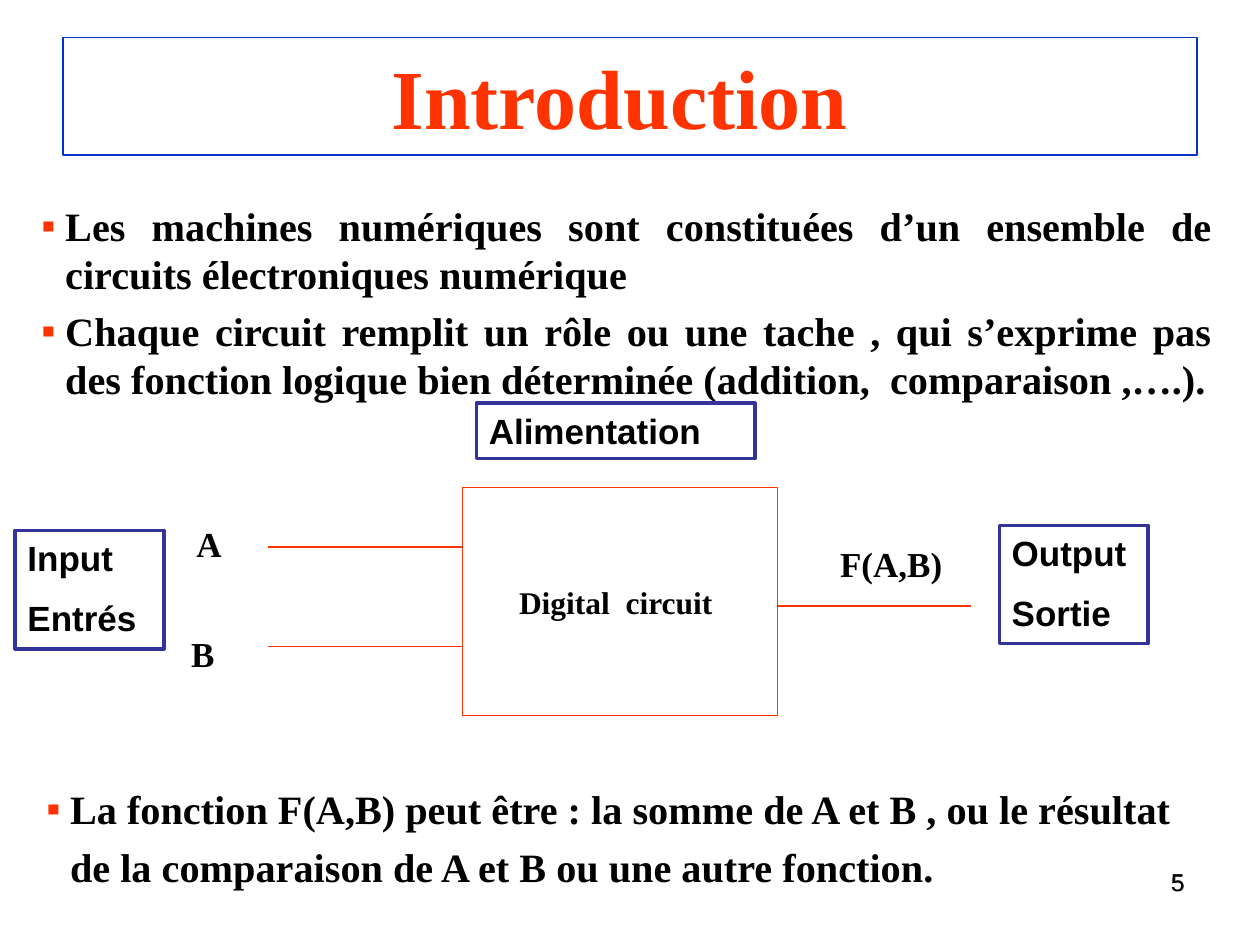
"""Build the introduction slide: a digital circuit with its inputs and output."""
from dataclasses import dataclass, field
from typing import Optional

from lxml import etree
from pptx import Presentation
from pptx import util as u
from pptx.dml.color import RGBColor
from pptx.enum import shapes, text
from pptx.oxml.ns import qn

COLOURS = {"text": "000000", "accent": "FF3300", "title": "0033CC",
           "label": "333399", "paper": "FFFFFF"}
SERIF, SANS = "Times New Roman", "Arial"
INDENT, TAB = 13.6, 28
LEFT, CENTRE, RIGHT, JUSTIFY = (text.PP_ALIGN.LEFT, text.PP_ALIGN.CENTER,
                                text.PP_ALIGN.RIGHT, text.PP_ALIGN.JUSTIFY)


@dataclass
class Block:
    """Text with its place in points, its format and an optional outline."""
    at: tuple[float, float, float, float]
    lines: list[str]
    size: float = 20
    font: str = SERIF
    bold: bool = True
    colour: str = "text"
    align: text.PP_ALIGN = LEFT
    middle: bool = False
    wrap: bool = True
    gap: float = 0
    leading: Optional[float] = None
    bullet: bool = False
    outline: Optional[str] = None
    weight: float = 0.75
    fill: Optional[str] = None


@dataclass
class Wire:
    """A horizontal wire in points."""
    start: float
    end: float
    y: float


@dataclass
class Port:
    """A framed label beside the circuit."""
    at: tuple[float, float, float, float]
    lines: list[str] = field(default_factory=list)


def rgb(name: str) -> RGBColor:
    """Return the named colour."""
    return RGBColor.from_string(COLOURS[name])


def add_bullet(paragraph) -> None:
    """Give a paragraph a hanging square bullet and a tab stop."""
    props = paragraph._p.get_or_add_pPr()
    props.set("marL", str(u.Pt(INDENT)))
    props.set("indent", str(-u.Pt(INDENT)))
    colour = etree.SubElement(props, qn("a:buClr"))
    etree.SubElement(colour, qn("a:srgbClr"), val=COLOURS["accent"])
    etree.SubElement(props, qn("a:buFont"), typeface=SANS)
    etree.SubElement(props, qn("a:buChar"), char="▪")
    tabs = etree.SubElement(props, qn("a:tabLst"))
    etree.SubElement(tabs, qn("a:tab"), pos=str(u.Pt(TAB)), algn="l")


def add_block(slide, block: Block) -> None:
    """Draw a block as a rectangle if outlined, else as a text box."""
    place = [u.Pt(length) for length in block.at]
    if block.outline:
        holder = slide.shapes.add_shape(shapes.MSO_SHAPE.RECTANGLE, *place)
        holder.shadow.inherit = False
        holder.line.color.rgb = rgb(block.outline)
        holder.line.width = u.Pt(block.weight)
        if block.fill:
            holder.fill.solid()
            holder.fill.fore_color.rgb = rgb(block.fill)
        else:
            holder.fill.background()
    else:
        holder = slide.shapes.add_textbox(*place)
    frame = holder.text_frame
    frame.word_wrap = block.wrap
    frame.vertical_anchor = text.MSO_ANCHOR.MIDDLE if block.middle else text.MSO_ANCHOR.TOP
    for index, line in enumerate(block.lines):
        paragraph = frame.add_paragraph() if index else frame.paragraphs[0]
        layout = {"alignment": block.align, "line_spacing": block.leading,
                  "space_before": u.Pt(block.gap * block.size)}
        for name, value in layout.items():
            setattr(paragraph, name, value)
        if block.bullet:
            add_bullet(paragraph)
        run = paragraph.add_run()
        run.text = line
        style = {"size": u.Pt(block.size), "name": block.font, "bold": block.bold}
        for name, value in style.items():
            setattr(run.font, name, value)
        run.font.color.rgb = rgb(block.colour)


def add_wire(slide, wire: Wire) -> None:
    """Draw a wire of the circuit."""
    connector = slide.shapes.add_connector(
        shapes.MSO_CONNECTOR.STRAIGHT,
        u.Pt(wire.start), u.Pt(wire.y), u.Pt(wire.end), u.Pt(wire.y))
    connector.line.color.rgb = rgb("accent")
    connector.line.width = u.Pt(0.75)
    etree.SubElement(connector._element.spPr, qn("a:effectLst"))


PAGE_NUMBERS = [Block((516.2, 491.8, 167.8, 37.4), ["5"], size=14, font=font,
                      bold=False, align=RIGHT) for font in (SANS, SERIF)]
PROSE = [
    Block((36, 21.6, 648, 67), ["Introduction "], size=48, colour="accent",
          align=CENTRE, middle=True, outline="title"),
    Block((16.6, 111.6, 684, 132.5),
          ["Les machines numériques sont constituées d’un ensemble de "
           "circuits électroniques numérique ",
           "Chaque circuit remplit un rôle ou une tache , qui s’exprime pas "
           "des fonction logique bien déterminée (addition,  comparaison ,….)."],
          size=23, align=JUSTIFY, gap=0.2, bullet=True, outline="paper"),
    Block((19.4, 439.2, 674.6, 74.2),
          ["La fonction F(A,B) peut être : la somme de A et B , ou le résultat "
           "de la comparaison de A et B ou une autre fonction."],
          size=23, leading=1.2, bullet=True, outline="paper"),
]
CIRCUIT = Block((264.2, 278.6, 180, 130.3), ["Digital  circuit "], size=18,
                align=CENTRE, middle=True, wrap=False, outline="accent")
WIRES = [Wire(153.4, 264.2, 312.5), Wire(153.4, 264.2, 369.4), Wire(444.2, 555.1, 346.3)]
SIGNALS = [
    Block((105.1, 295.2, 48.2, 31), ["A"], gap=0.5),
    Block((473, 306.7, 104.4, 31), ["F(A,B)"], gap=0.5),
    Block((102.2, 357.8, 48.2, 31), ["B"], gap=0.5),
]
PORTS = [
    Port((8.6, 303.1, 85, 67.7), ["Input", "Entrés"]),
    Port((571, 300.2, 85, 67.7), ["Output", "Sortie"]),
    Port((272.2, 230.4, 159.1, 31.7), ["Alimentation"]),
]


def main() -> None:
    """Build and save the slide."""
    deck = Presentation()
    deck.slide_width, deck.slide_height = u.Pt(720), u.Pt(540)
    slide = deck.slides.add_slide(deck.slide_layouts[6])
    for block in [*PAGE_NUMBERS, *PROSE, CIRCUIT]:
        add_block(slide, block)
    for wire in WIRES:
        add_wire(slide, wire)
    for signal in SIGNALS:
        add_block(slide, signal)
    for port in PORTS:
        add_block(slide, Block(port.at, port.lines, font=SANS, gap=0.5,
                               outline="label", weight=2, fill="paper"))
    deck.save("out.pptx")


if __name__ == "__main__":
    main()
